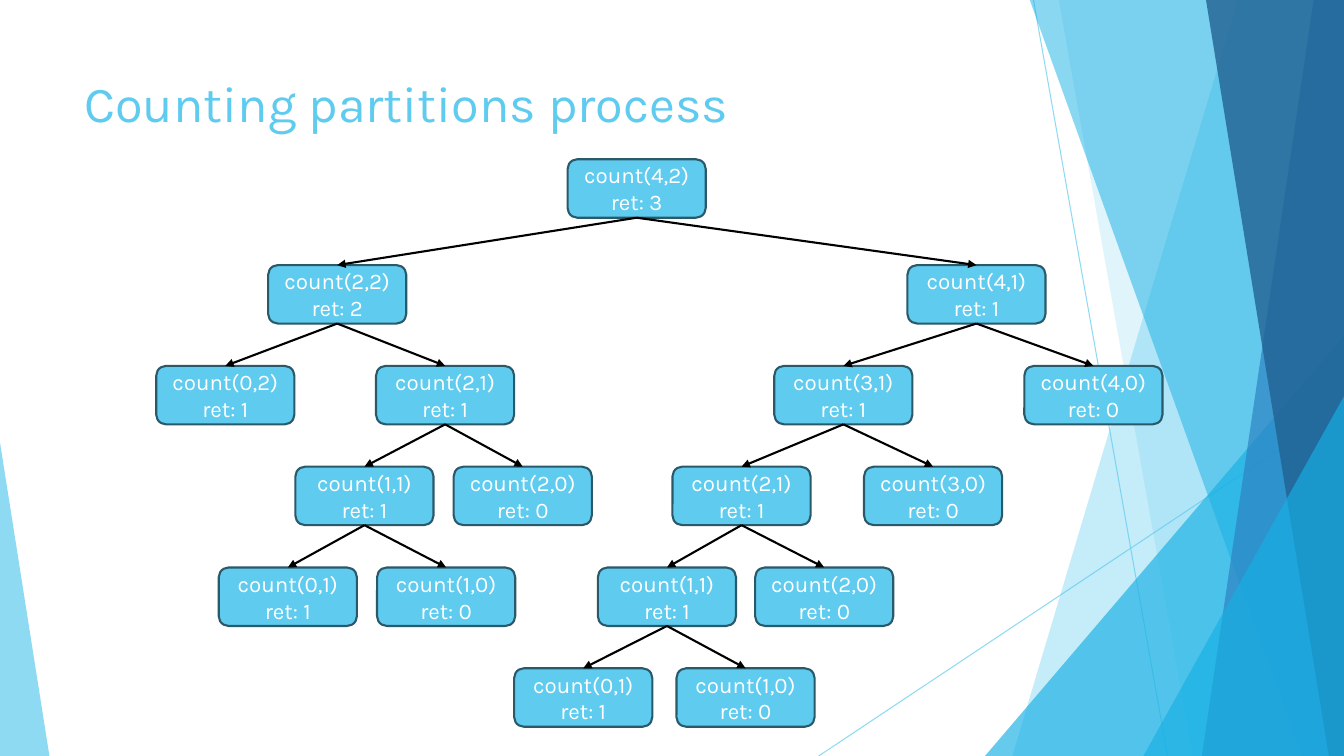
from pptx import Presentation
from pptx.dml.color import RGBColor
from pptx.enum.shapes import MSO_CONNECTOR, MSO_SHAPE
from pptx.enum.text import MSO_ANCHOR, PP_ALIGN
from pptx.oxml.ns import qn
from pptx.oxml.xmlchemy import OxmlElement
from pptx.util import Pt

PX = 9144  # EMU: 100 px to the inch
WIDTH, HEIGHT = 1333, 750
STRAIGHT = MSO_CONNECTOR.STRAIGHT
TRIANGLE, ROUNDED = MSO_SHAPE.ISOSCELES_TRIANGLE, MSO_SHAPE.ROUNDED_RECTANGLE
CENTER, MIDDLE, TOP = PP_ALIGN.CENTER, MSO_ANCHOR.MIDDLE, MSO_ANCHOR.TOP
TOP_SIDE, BOTTOM_SIDE = 0, 2

SKY = RGBColor(0x5F, 0xCB, 0xEF)
CYAN = RGBColor(0x17, 0xB0, 0xE4)
BLUE = RGBColor(0x2E, 0x83, 0xC3)
NAVY = RGBColor(0x22, 0x62, 0x92)
OUTLINE = RGBColor(0x2A, 0x59, 0x69)
WHITE = RGBColor(0xFF, 0xFF, 0xFF)
BLACK = RGBColor(0x00, 0x00, 0x00)

RAYS = [((1025, 0), (1158, HEIGHT)), ((WIDTH, 403), (812, HEIGHT))]
# Each band reaches the right edge: top x, bottom x, colour, opacity in percent
BACK_BANDS = [(1228, 1004, SKY, 36), (1050, 1183, SKY, 20)]
FRONT_BANDS = [(1021, 1291, CYAN, 50), (1303, 1192, BLUE, 70),
               (1196, 1318, NAVY, 80)]

NODE_WIDTH, NODE_HEIGHT = 137, 58
LEVEL_TOPS = [158, 263, 363, 463, 563, 663]
# Left edges of the calls, in the order in which they are made
CALL_LEFTS = [563, 266, 155, 373, 293, 217, 374, 450,
              900, 768, 667, 593, 510, 671, 749, 857, 1016]


class SlideBuilder:
    font = "Karla"

    def __init__(self, slide):
        self.slide = slide
        self.shapes = slide.shapes

    def set_opacity(self, shape, percent):
        for color in shape._element.spPr.iter(qn("a:srgbClr")):
            alpha = OxmlElement("a:alpha")
            alpha.set("val", str(percent * 1000))
            color.append(alpha)

    def fill(self, shape, color, opacity=100):
        shape.shadow.inherit = False
        shape.fill.solid()
        shape.fill.fore_color.rgb = color
        shape.line.fill.background()
        if opacity < 100:
            self.set_opacity(shape, opacity)

    def band(self, top_x, bottom_x, color, opacity):
        builder = self.shapes.build_freeform(top_x, -1, scale=PX)
        builder.add_line_segments(
            [(WIDTH, -1), (WIDTH, HEIGHT), (bottom_x, HEIGHT)])
        self.fill(builder.convert_to_shape(), color, opacity)

    def triangle(self, left, top, width, apex, color, opacity):
        """Draw a triangle down to the slide's bottom; apex is 0 left to 1 right."""
        shape = self.shapes.add_shape(
            TRIANGLE, left * PX, top * PX, width * PX, (HEIGHT - top) * PX)
        shape.adjustments[0] = apex
        self.fill(shape, color, opacity)

    def line(self, start, end, color, weight):
        connector = self.shapes.add_connector(
            STRAIGHT, *(value * PX for value in start + end))
        connector.line.color.rgb = color
        connector.line.width = Pt(weight)
        connector._element.spPr.append(OxmlElement("a:effectLst"))
        return connector

    def arrow(self, parent, child):
        connector = self.line((0, 0), (0, 0), BLACK, 1.5)
        connector.begin_connect(parent, BOTTOM_SIDE)
        connector.end_connect(child, TOP_SIDE)
        tail = OxmlElement("a:tailEnd")
        tail.set("type", "triangle")
        connector._element.spPr.find(qn("a:ln")).append(tail)

    def set_text(self, shape, text, size, color, anchor, alignment=None):
        text_frame = shape.text_frame
        text_frame.text = text
        text_frame.word_wrap = True
        text_frame.vertical_anchor = anchor
        for paragraph in text_frame.paragraphs:
            paragraph.alignment = alignment
            for run in paragraph.runs:
                run.font.name = self.font
                run.font.size = Pt(size)
                run.font.color.rgb = color

    def title(self, text, left, top, width, height):
        box = self.shapes.add_textbox(
            left * PX, top * PX, width * PX, height * PX)
        self.set_text(box, text, 36, SKY, TOP)

    def node(self, text, left, top):
        shape = self.shapes.add_shape(
            ROUNDED, left * PX, top * PX, NODE_WIDTH * PX, NODE_HEIGHT * PX)
        self.fill(shape, SKY)
        shape.line.color.rgb = OUTLINE
        shape.line.width = Pt(1.5)
        self.set_text(shape, text, 16, WHITE, MIDDLE, CENTER)
        return shape


def count(total, largest):
    if total == 0:
        return 1
    if total < 0 or largest == 0:
        return 0
    return count(total - largest, largest) + count(total, largest - 1)


def draw_calls(builder, lefts, branches, total, largest, level=0):
    """Draw a call and those it makes; collect (parent, child) in branches."""
    text = f"count({total},{largest})\nret: {count(total, largest)}"
    shape = builder.node(text, next(lefts), LEVEL_TOPS[level])
    if total and largest:
        for call in ((total - largest, largest), (total, largest - 1)):
            child = draw_calls(builder, lefts, branches, *call, level + 1)
            branches.append((shape, child))
    return shape


def draw_background(builder):
    for start, end in RAYS:
        ray = builder.line(start, end, SKY, 0.75)
        builder.set_opacity(ray, 70)
    for band in BACK_BANDS:
        builder.band(*band)
    builder.triangle(977, 333, 356, 1, CYAN, 66)
    for band in FRONT_BANDS:
        builder.band(*band)
    builder.triangle(1134, 393, 199, 1, CYAN, 66)
    builder.triangle(0, 439, 49, 0, SKY, 70)


def main():
    presentation = Presentation()
    presentation.slide_width = WIDTH * PX
    presentation.slide_height = HEIGHT * PX
    blank_layout = presentation.slide_layouts[6]
    builder = SlideBuilder(presentation.slides.add_slide(blank_layout))

    draw_background(builder)
    builder.title("Counting partitions process", 74, 67, 940, 144)
    branches = []
    draw_calls(builder, iter(CALL_LEFTS), branches, 4, 2)
    for parent, child in branches:
        builder.arrow(parent, child)

    presentation.save("out.pptx")


if __name__ == "__main__":
    main()
